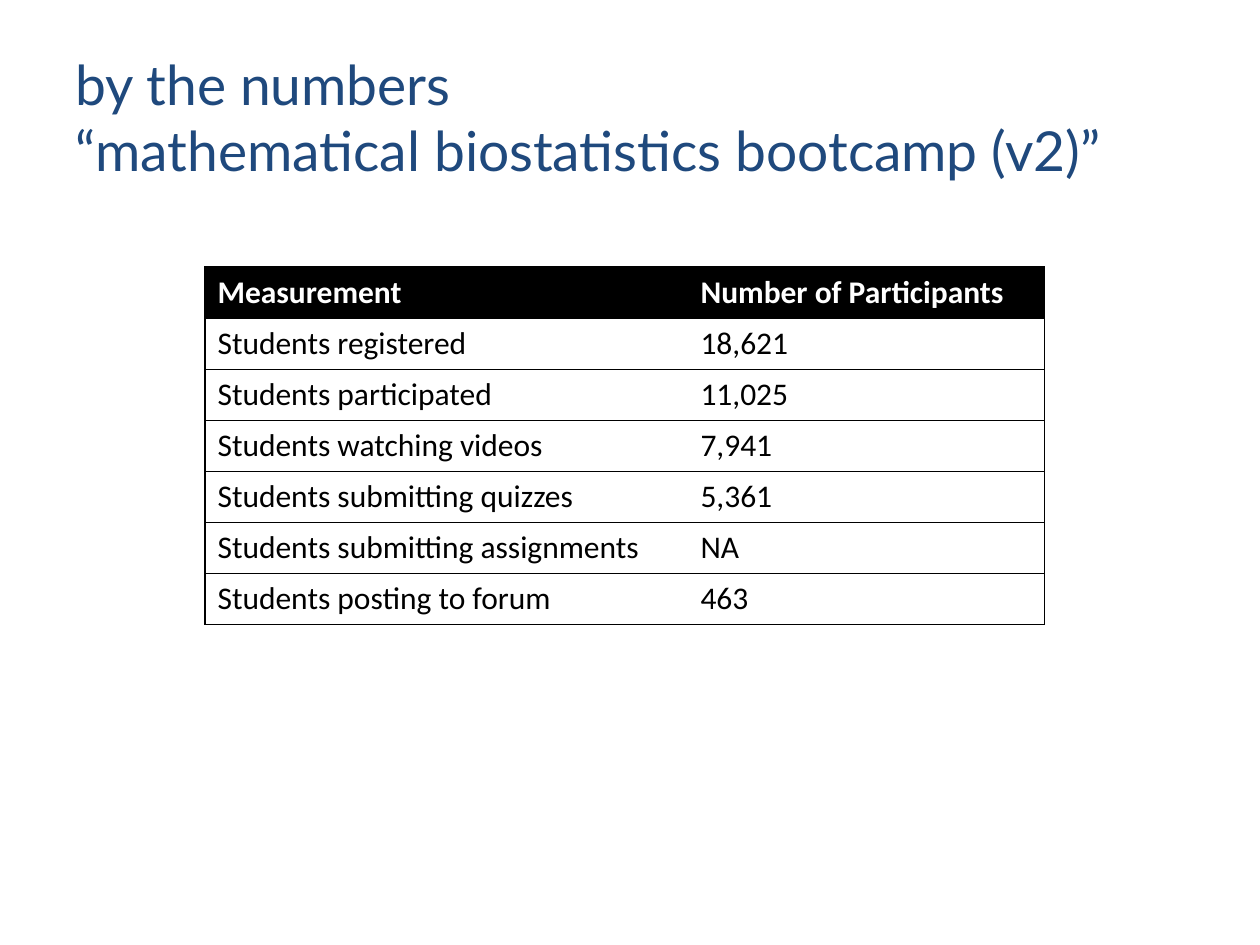
from copy import deepcopy

from pptx import Presentation
from pptx.dml.color import RGBColor
from pptx.enum.text import MSO_ANCHOR, MSO_AUTO_SIZE, PP_ALIGN
from pptx.oxml import parse_xml
from pptx.oxml.ns import nsdecls, qn
from pptx.util import Emu, Pt

MIDDLE = MSO_ANCHOR.MIDDLE
LEFT = PP_ALIGN.LEFT
NO_AUTOFIT = MSO_AUTO_SIZE.NONE
EMU_PER_PX = 914400 // 126

BLUE, BLACK, WHITE = "1F497D", "000000", "FFFFFF"
TITLE = "by the numbers \v“mathematical biostatistics bootcamp (v2)”"
COLUMN_WIDTHS = [483, 357]
ROW_HEIGHT = 51
ROWS = [
    ("Measurement", "Number of Participants"),
    ("Students registered", "18,621"),
    ("Students participated", "11,025"),
    ("Students watching videos", "7,941"),
    ("Students submitting quizzes", "5,361"),
    ("Students submitting assignments", "NA"),
    ("Students posting to forum", "463"),
]


def px(length):
    return Emu(length * EMU_PER_PX)


def color(hex_string):
    return RGBColor.from_string(hex_string)


def format_runs(paragraph, font_name, size, hex_color, bold=False):
    for run in paragraph.runs:
        run.font.name = font_name
        run.font.size = Pt(size)
        run.font.bold = bold
        run.font.color.rgb = color(hex_color)


def add_title(slide, text, left, top, width, height):
    title = slide.shapes.title
    title.left, title.top = px(left), px(top)
    title.width, title.height = px(width), px(height)
    frame = title.text_frame
    frame.text = text
    frame.auto_size = NO_AUTOFIT
    frame.vertical_anchor = MIDDLE
    paragraph = frame.paragraphs[0]
    paragraph.alignment = LEFT
    format_runs(paragraph, "Lato", 31.5, BLUE)
    # The line break takes the size of the text around it
    run_properties = paragraph.runs[0].font._element
    for line_break in paragraph._p.findall(qn("a:br")):
        line_break.append(deepcopy(run_properties))


def set_borders(cell, visible_sides):
    properties = cell._tc.get_or_add_tcPr()
    for side in "LRTB":
        fill = (f'<a:solidFill><a:srgbClr val="{BLACK}"/></a:solidFill>'
                if side in visible_sides else "<a:noFill/>")
        properties.append(parse_xml(
            f'<a:ln{side} {nsdecls("a")} w="{Pt(0.75)}">{fill}</a:ln{side}>'))


def format_cell(cell, text, is_header, sides):
    cell.text = text
    format_runs(cell.text_frame.paragraphs[0], "Calibri", 18,
                WHITE if is_header else BLACK, is_header)
    set_borders(cell, sides)
    if is_header:
        cell.fill.solid()
        cell.fill.fore_color.rgb = color(BLACK)
    else:
        cell.fill.background()


def add_numbers_table(slide, left, top):
    table = slide.shapes.add_table(
        len(ROWS), len(COLUMN_WIDTHS), px(left), px(top),
        px(sum(COLUMN_WIDTHS)), px(ROW_HEIGHT * len(ROWS))).table
    for column, width in zip(table.columns, COLUMN_WIDTHS):
        column.width = px(width)
    for row_index, (row, texts) in enumerate(zip(table.rows, ROWS)):
        row.height = px(ROW_HEIGHT)
        # Outer frame and row rules, with no line between the columns
        for cell, text, sides in zip(row.cells, texts, ("LTB", "RTB")):
            format_cell(cell, text, row_index == 0, sides)


def main():
    presentation = Presentation()
    presentation.slide_width, presentation.slide_height = px(1260), px(945)
    title_only = presentation.slide_layouts[5]
    slide = presentation.slides.add_slide(title_only)

    # Heading
    add_title(slide, TITLE, 63, 38, 1134, 157)

    # Course participation figures
    add_numbers_table(slide, 205, 267)

    presentation.save("out.pptx")


if __name__ == "__main__":
    main()
